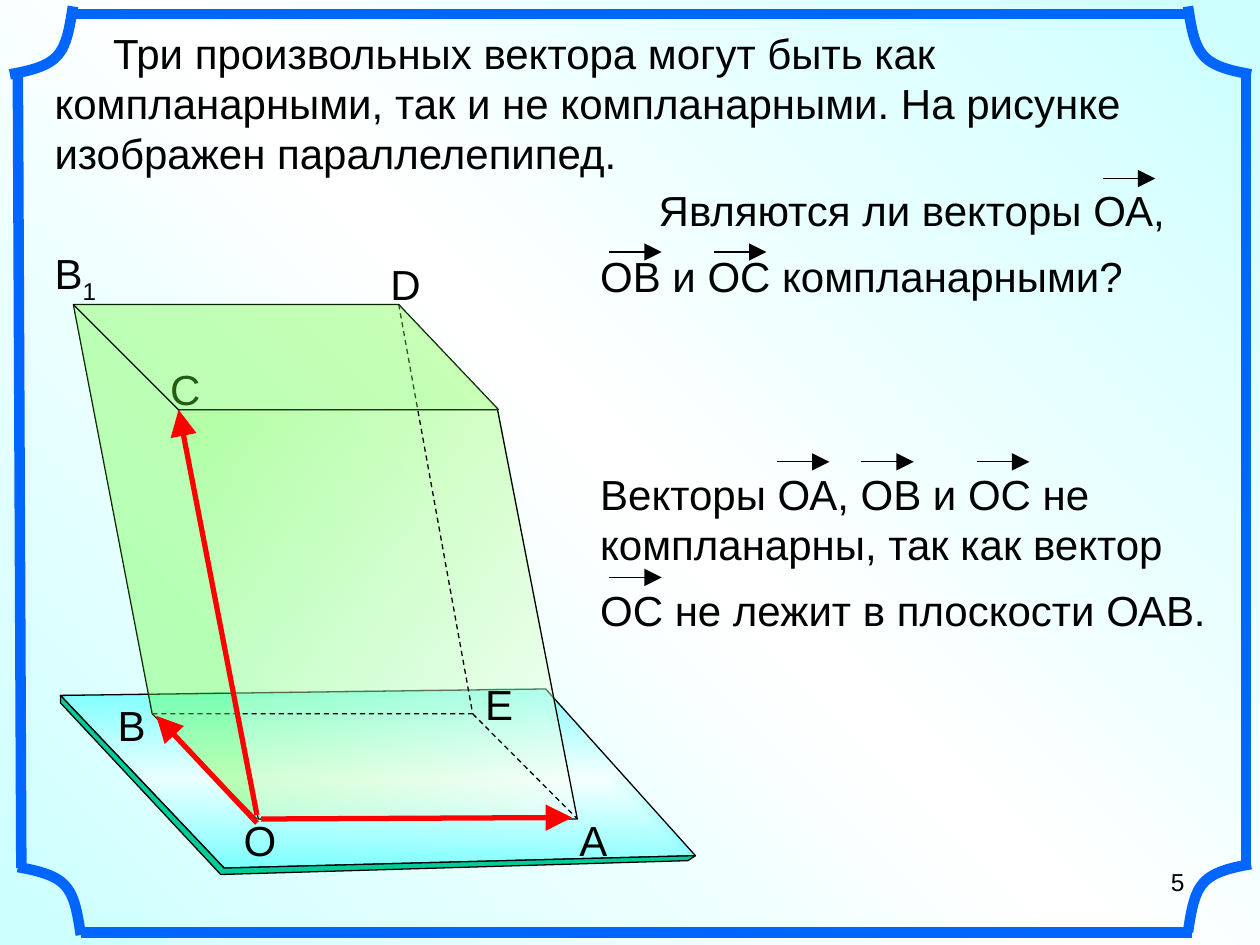
from lxml import etree
from pptx import Presentation
from pptx.dml.color import RGBColor
from pptx.enum.dml import MSO_LINE
from pptx.enum.shapes import MSO_CONNECTOR, MSO_SHAPE
from pptx.enum.text import PP_ALIGN
from pptx.oxml.ns import qn
from pptx.util import Cm, Pt

STRAIGHT = MSO_CONNECTOR.STRAIGHT
PARALLELOGRAM = MSO_SHAPE.PARALLELOGRAM
DASH = MSO_LINE.DASH
LEFT, RIGHT = PP_ALIGN.LEFT, PP_ALIGN.RIGHT

BLACK, BLUE, RED, GREEN = "000000", "0066FF", "FF0000", "66FF33"

# Vertices of the parallelepiped, cm
O, A, B, E = (5.18, 16.51), (11.64, 16.51), (3.07, 14.39), (9.53, 14.39)
C, B1, D, F = (3.6, 8.26), (1.48, 6.14), (8.04, 6.14), (10.05, 8.26)


def rgb(color):
    return RGBColor.from_string(color)


def set_alpha(color_el, percent):
    etree.SubElement(color_el, qn("a:alpha")).set("val", str(percent * 1000))


def set_gradient(owner, fill, stops, angle=None):
    """Stops are (position, colour, opacity); no angle means from the centre."""
    fill.gradient()
    grad = owner.find(".//" + qn("a:gradFill"))
    for child in list(grad):
        grad.remove(child)
    grad.set("rotWithShape", "1")
    gs_list = etree.SubElement(grad, qn("a:gsLst"))
    for pos, color, opacity in stops:
        gs = etree.SubElement(gs_list, qn("a:gs"), pos=str(pos * 1000))
        set_alpha(etree.SubElement(gs, qn("a:srgbClr"), val=color), opacity)
    if angle is None:
        center = etree.SubElement(grad, qn("a:path"), path="rect")
        etree.SubElement(center, qn("a:fillToRect"),
                         l="50000", t="50000", r="50000", b="50000")
    else:
        etree.SubElement(grad, qn("a:lin"), ang=str(angle * 60000), scaled="1")


def set_line(sp, color, width, dash=None):
    sp.line.color.rgb = rgb(color)
    sp.line.width = Pt(width)
    if dash:
        sp.line.dash_style = dash


def add_line(s, start, end, color=BLACK, width=0.75, dash=None, arrow=False):
    sp = s.shapes.add_connector(STRAIGHT, *(Cm(v) for v in (*start, *end)))
    set_line(sp, color, width, dash)
    if arrow:
        etree.SubElement(sp.line._get_or_add_ln(), qn("a:tailEnd"),
                         type="triangle", w="lg", len="lg")
    etree.SubElement(sp.element.spPr, qn("a:effectLst"))


def add_outline(s, points, color=BLACK, width=0.75, dash=None, fill=None, closed=False):
    (x, y), *rest = [(Cm(px), Cm(py)) for px, py in points]
    builder = s.shapes.build_freeform(x, y)
    builder.add_line_segments(rest, close=closed)
    sp = builder.convert_to_shape()
    sp.shadow.inherit = False
    if fill:
        sp.fill.solid()
        sp.fill.fore_color.rgb = rgb(fill)
    else:
        sp.fill.background()
    if color:
        set_line(sp, color, width, dash)
    else:
        sp.line.fill.background()
    return sp


def add_text(s, text, x, y, w, h, size=24, align=LEFT, indent=0, gap=0, subscript=""):
    """Lines of text become paragraphs; indent applies to the first one."""
    tf = s.shapes.add_textbox(Cm(x), Cm(y), Cm(w), Cm(h)).text_frame
    tf.word_wrap = True
    for i, line in enumerate(text.split("\n")):
        p = tf.paragraphs[0] if i == 0 else tf.add_paragraph()
        p.alignment = align
        if i:
            p.space_before = Pt(gap)
        elif indent:
            p._p.get_or_add_pPr().set("indent", str(Cm(indent)))
        for part in filter(None, (line, subscript)):
            r = p.add_run()
            r.text = part
            r.font.size = Pt(size)
            r.font.name = "Arial"
            r.font.color.rgb = rgb(BLACK)
        if subscript:
            r._r.get_or_add_rPr().set("baseline", "-25000")


def bezier(p0, p1, p2, p3, steps=12):
    for i in range(1, steps + 1):
        t = i / steps
        u = 1 - t
        yield tuple(u**3 * a + 3 * u * u * t * b + 3 * u * t * t * c + t**3 * d
                    for a, b, c, d in zip(p0, p1, p2, p3))


def add_frame(s):
    for start, end in [((1.5, 0.28), (24, 0.28)), ((1.63, 18.8), (24.03, 18.8)),
                       ((25.12, 1.5), (25.12, 17.5)), ((0.36, 1.5), (0.43, 17.5))]:
        add_line(s, start, end, BLUE, 6)
    # One corner curve, mirrored into the four corners
    mid = (0.96, 0.38)
    curve = [(0, 0),
             *bezier((0, 0), (0.38, 0.07), (0.76, 0.15), mid),
             *bezier(mid, (1.16, 0.6), (1.21, 0.99), (1.27, 1.37))]
    for x, y, sx, sy in [(0.36, 17.48, 1, 1), (25.22, 17.42, -1, 1),
                         (25.22, 1.5, -1, -1), (0.2, 1.5, 1, -1)]:
        add_outline(s, [(x + sx * dx, y + sy * dy) for dx, dy in curve], BLUE, 6)


def add_plane(s):
    left, front, right = (1.22, 14.02), (4.52, 17.5), (14.02, 17.25)
    top = add_outline(s, [(11, 13.89), left, front, right], closed=True)
    set_gradient(top.element, top.fill, [(0, "FFFFFF", 41), (100, "00FFFF", 44)])
    add_outline(s, [right, (13.87, 17.35), (4.45, 17.63), (1.22, 14.17), left, front],
                fill="00CC99", closed=True)


def add_front_face(s):
    sp = s.shapes.add_shape(PARALLELOGRAM, Cm(C[0]), Cm(C[1]),
                            Cm(A[0] - C[0]), Cm(A[1] - C[1]))
    sp.shadow.inherit = False
    sp.adjustments[0] = 0.2
    sp.element.spPr.get_or_add_xfrm().set("flipH", "1")
    set_gradient(sp.element, sp.fill, [(0, "FFFFFF", 46), (100, GREEN, 45)], 315)
    set_line(sp, BLACK, 0.75)


def add_label(s, text, x, y, subscript=""):
    add_text(s, text, x, y, 1.48, 1.27, subscript=subscript)


def add_solid(s):
    add_front_face(s)
    # Hidden and visible edges
    add_outline(s, [B, E, D], dash=DASH)
    add_outline(s, [D, B1, B])
    add_line(s, E, A, dash=DASH)
    add_line(s, D, F)
    add_line(s, B, O)
    for text, x, y in [("А", 11.43, 16.3), ("О", 4.66, 16.3), ("Е", 9.53, 13.55),
                       ("D", 7.62, 5.08), ("C", 3.18, 7.2)]:
        add_label(s, text, x, y)
    # Tinted side and top faces
    tint = add_outline(s, [O, B, B1, D, F, C], color=None, fill=GREEN, closed=True)
    set_alpha(tint.element.spPr.find(".//" + qn("a:srgbClr")), 36)
    add_line(s, B1, C)
    add_label(s, "В", 2.12, 13.97)
    add_label(s, "B", 0.85, 4.87, subscript="1")
    # Vectors from O
    for start, end in [((5.18, 16.43), C), ((5.26, 16.51), (11.53, 16.48)),
                       ((5.18, 16.59), (3.15, 14.43))]:
        add_line(s, start, end, RED, 3, arrow=True)


def add_vector_text(s, text, y, h, arrows, indent=0):
    add_text(s, text, 11.85, y, 12.91, h, indent=indent, gap=9)
    for x, arrow_y in arrows:
        add_line(s, (x, arrow_y), (x + 1.06, arrow_y), arrow=True)


def main():
    prs = Presentation()
    prs.slide_width, prs.slide_height = Cm(25.4), Cm(19.05)
    s = prs.slides.add_slide(prs.slide_layouts[6])
    set_gradient(s.element, s.background.fill,
                 [(0, "CCFFFF", 100), (50, "FFFFFF", 100), (100, "CCFFFF", 100)], 315)

    add_plane(s)
    add_text(s, "Три произвольных вектора могут быть как компланарными, "
                "так и не компланарными. На рисунке изображен параллелепипед.",
             0.85, 0.42, 23.92, 3.3, indent=1.18)
    add_frame(s)
    add_solid(s)

    # Answer and question
    add_vector_text(s, "Векторы ОА, ОВ и ОС не компланарны, так как вектор\n"
                       "ОС не лежит в плоскости ОАВ.", 9.31, 3.63,
                    [(12.28, 11.64), (15.66, 9.31), (17.36, 9.31), (19.69, 9.31)])
    add_vector_text(s, "Являются ли векторы ОА,\nОВ и ОС компланарными?", 3.6, 2.62,
                    [(22.23, 3.6), (12.28, 5.08), (14.39, 5.08)], indent=1.18)

    # Slide number
    add_text(s, "5", 18.2, 17.36, 5.93, 1.32, size=14, align=RIGHT)
    prs.save("out.pptx")


if __name__ == "__main__":
    main()
